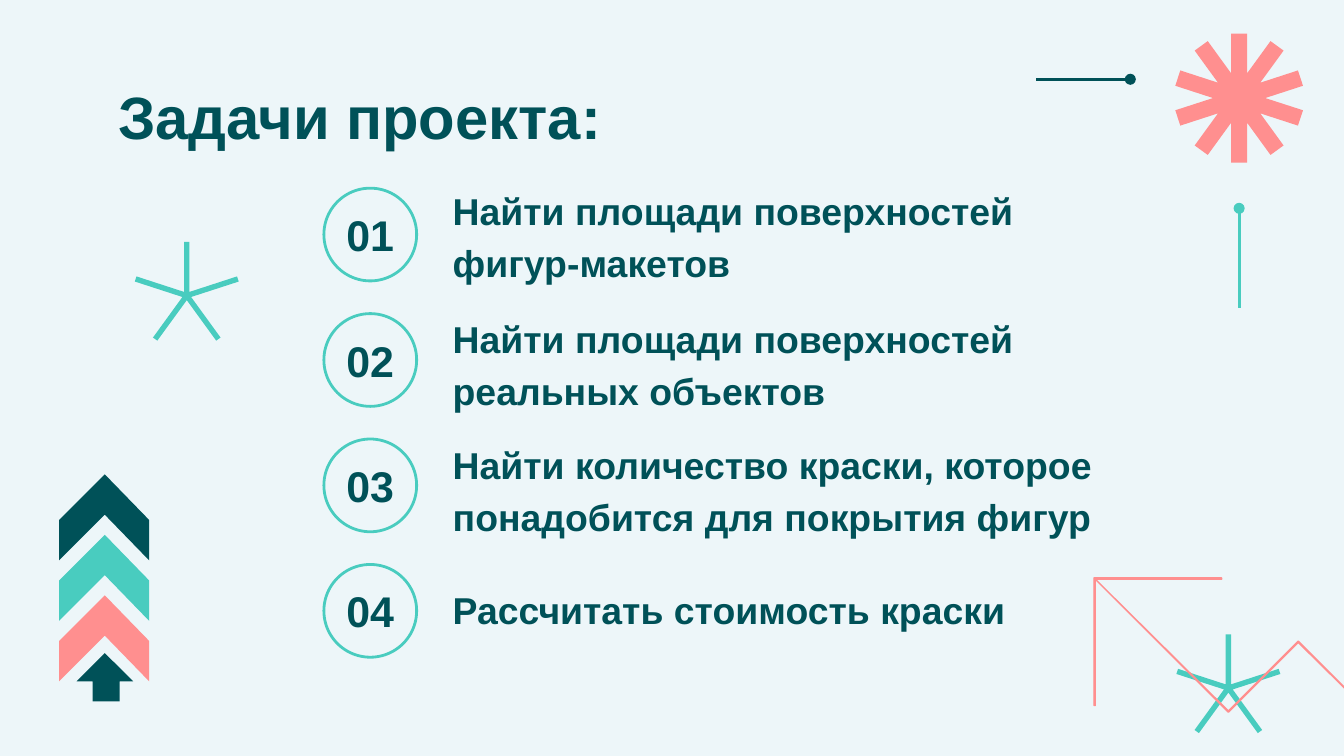
import math

import pptx
import pptx.dml.color
import pptx.enum.shapes
import pptx.enum.text
import pptx.oxml
import pptx.oxml.ns
import pptx.util
from pptx.util import Inches

COLORS = {"back": "EDF6F9", "dark": "005158", "mint": "49CCBF", "coral": "FF8F8F"}
FONT = "Arial"
SLIDE_WIDTH = 10
SLIDE_HEIGHT = SLIDE_WIDTH * 9 / 16
TITLE = "Задачи проекта:"
TASKS = [
    ("Найти площади поверхностей фигур-макетов", 1.71, 4.66),
    ("Найти площади поверхностей реальных объектов", 2.66, 4.66),
    ("Найти количество краски, которое понадобится для покрытия фигур", 3.6, 5.51),
    ("Рассчитать стоимость краски", 4.29, 4.66),
]
STARS = [
    (9.14, 5.12, 5, 0.4, 0.02, "mint"),
    (1.39, 2.2, 5, 0.4, 0.02, "mint"),
    (9.22, 0.73, 10, 0.48, 0.06, "coral"),
]
PINS = [((9.22, 2.29), (9.22, 1.55), "mint"), ((7.71, 0.59), (8.41, 0.59), "dark")]
ZIGZAG = [
    (9.09, 4.3), (9.09, 4.31), (8.15, 4.31), (9.14, 5.29), (9.66, 4.77), (10.5, 5.61),
    (9.66, 4.78), (9.14, 5.3), (8.15, 4.31), (8.15, 5.25), (8.14, 5.25), (8.14, 4.3),
]
CHEVRON = [(0.44, 0.34), (0.78, 0), (1.11, 0.34), (1.11, 0.64), (0.78, 0.3), (0.44, 0.64)]
CHEVRON_COLORS = ["dark", "mint", "coral"]
CHEVRON_TOP, CHEVRON_STEP = 3.53, 0.45
ARROW = [
    (0.78, 4.86), (0.57, 5.07), (0.69, 5.07), (0.69, 5.22),
    (0.89, 5.22), (0.89, 5.07), (0.99, 5.07),
]
CIRCLE_LEFT, CIRCLE_TOP, CIRCLE_LAST_TOP, CIRCLE_SIZE = 2.41, 1.4, 4.2, 0.69
CIRCLE_STEP = (CIRCLE_LAST_TOP - CIRCLE_TOP) / (len(TASKS) - 1)
NUMBER_HEIGHT = 0.46
TASK_LEFT, TASK_HEIGHT = 3.27, 0.51

ALIGN = pptx.enum.text.PP_ALIGN
ANCHOR = pptx.enum.text.MSO_ANCHOR


def color(name):
    return pptx.dml.color.RGBColor.from_string(COLORS[name])


def star_points(center_x, center_y, rays, radius, half_width):
    step = 2 * math.pi / rays
    notch = half_width / math.sin(step / 2)
    points = []
    for ray in range(rays):
        angle = ray * step
        sine, cosine = math.sin(angle), math.cos(angle)
        for side in (-half_width, half_width):
            points.append((center_x + radius * sine + side * cosine,
                           center_y - radius * cosine + side * sine))
        middle = angle + step / 2
        points.append((center_x + notch * math.sin(middle),
                       center_y - notch * math.cos(middle)))
    return points


def add_outline(shapes, points, fill):
    corners = [(Inches(x), Inches(y)) for x, y in points]
    builder = shapes.build_freeform(*corners[0])
    builder.add_line_segments(corners[1:], close=True)
    shape = builder.convert_to_shape()
    shape.shadow.inherit = False
    shape.fill.solid()
    shape.fill.fore_color.rgb = color(fill)
    shape.line.fill.background()
    return shape


def add_pin(shapes, start, end, name):
    pin = shapes.add_connector(pptx.enum.shapes.MSO_CONNECTOR.STRAIGHT,
                               *[Inches(value) for value in start + end])
    pin.line.color.rgb = color(name)
    pin.line.width = pptx.util.Pt(1.5)
    line = pin._element.spPr.find(pptx.oxml.ns.qn("a:ln"))
    line.append(pptx.oxml.parse_xml(
        f'<a:tailEnd {pptx.oxml.ns.nsdecls("a")} type="oval"/>'))
    pin._element.spPr.append(pptx.oxml.parse_xml(
        f'<a:effectLst {pptx.oxml.ns.nsdecls("a")}/>'))


def write(box, text, size, align, anchor, spacing=1.0):
    frame = box.text_frame
    frame.word_wrap = True
    frame.auto_size = pptx.enum.text.MSO_AUTO_SIZE.NONE
    frame.vertical_anchor = anchor
    frame.margin_left = frame.margin_right = Inches(0.1)
    frame.margin_top = frame.margin_bottom = Inches(0.1)
    para = frame.paragraphs[0]
    para.alignment = align
    para.line_spacing = spacing
    span = para.add_run()
    span.text = text
    span.font.name = FONT
    span.font.size = pptx.util.Pt(size)
    span.font.bold = True
    span.font.color.rgb = color("dark")


def place(left, top, width, height):
    return [Inches(value) for value in (left, top, width, height)]


def main():
    deck = pptx.Presentation()
    deck.slide_width, deck.slide_height = Inches(SLIDE_WIDTH), Inches(SLIDE_HEIGHT)
    page = deck.slides.add_slide(deck.slide_layouts[5])
    page.background.fill.solid()
    page.background.fill.fore_color.rgb = color("back")
    shapes = page.shapes

    title = shapes.title
    title.left, title.top, title.width, title.height = place(0.78, 0.49, 8.44, 0.63)
    write(title, TITLE, 32, ALIGN.LEFT, ANCHOR.TOP)

    for *geometry, fill in STARS:
        add_outline(shapes, star_points(*geometry), fill)
    zigzag = add_outline(shapes, ZIGZAG, "coral")
    zigzag.line.color.rgb = color("coral")
    zigzag.line.width = pptx.util.Pt(0.75)
    for start, end, name in PINS:
        add_pin(shapes, start, end, name)

    arrows = shapes.add_group_shape()
    for index, fill in enumerate(CHEVRON_COLORS):
        top = CHEVRON_TOP + index * CHEVRON_STEP
        add_outline(arrows.shapes, [(x, top + y) for x, y in CHEVRON], fill)
    add_outline(arrows.shapes, ARROW, "dark")

    for index, (task, task_top, task_width) in enumerate(TASKS):
        top = CIRCLE_TOP + index * CIRCLE_STEP
        circle = shapes.add_shape(pptx.enum.shapes.MSO_SHAPE.OVAL,
                                  *place(CIRCLE_LEFT, top, CIRCLE_SIZE, CIRCLE_SIZE))
        circle.shadow.inherit = False
        circle.fill.background()
        circle.line.color.rgb = color("mint")
        circle.line.width = pptx.util.Pt(1.5)
        number_top = top + (CIRCLE_SIZE - NUMBER_HEIGHT) / 2
        number = shapes.add_textbox(
            *place(CIRCLE_LEFT, number_top, CIRCLE_SIZE, NUMBER_HEIGHT))
        write(number, f"{index + 1:02}", 23, ALIGN.CENTER, ANCHOR.MIDDLE)
        box = shapes.add_textbox(*place(TASK_LEFT, task_top, task_width, TASK_HEIGHT))
        write(box, task, 20, ALIGN.LEFT, ANCHOR.BOTTOM, 1.15)

    deck.save("out.pptx")


if __name__ == "__main__":
    main()
